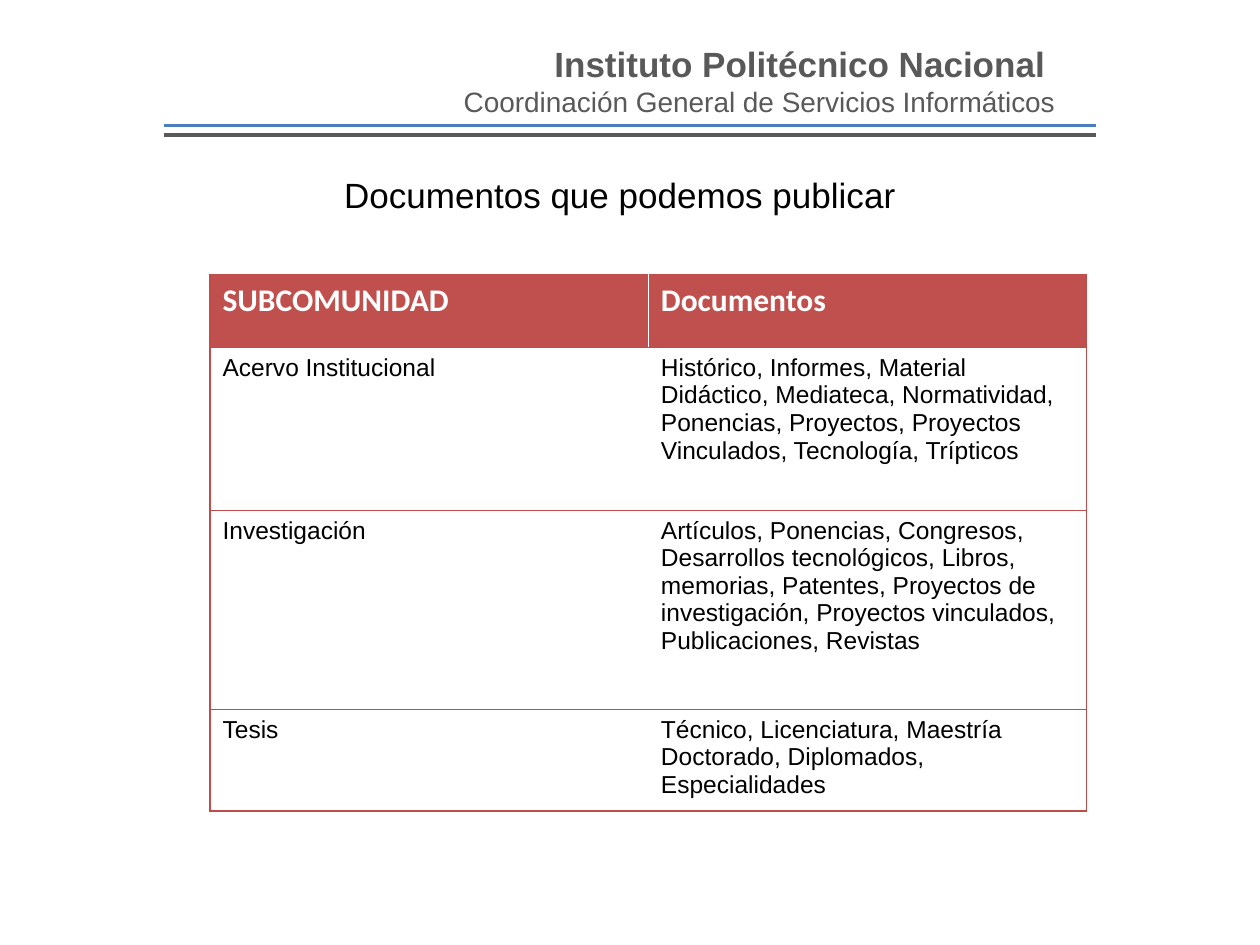
from lxml.etree import SubElement
from pptx import Presentation
from pptx.dml.color import RGBColor
from pptx.enum.shapes import MSO_CONNECTOR
from pptx.enum.text import PP_ALIGN
from pptx.oxml import parse_xml
from pptx.oxml.ns import nsdecls, qn
from pptx.util import Pt

COLORS = {"gray": "595959", "blue": "4B7EBC", "red": "C0504D",
          "border": "BF4C48", "black": "000000", "white": "FFFFFF"}


def format_text(para, size, color, bold=False, name="Arial", align=PP_ALIGN.LEFT):
    para.alignment = align
    for span in para.runs:
        span.font.name = name
        span.font.size = Pt(size)
        span.font.bold = bold
        span.font.color.rgb = RGBColor.from_string(COLORS[color])


def add_border(cell, side, position):
    """Draw a thin line on one side (L, R, T or B) of a table cell."""
    line = parse_xml(
        f'<a:ln{side} {nsdecls("a")} w="{Pt(0.75)}"><a:solidFill>'
        f'<a:srgbClr val="{COLORS["border"]}"/></a:solidFill></a:ln{side}>')
    cell._tc.get_or_add_tcPr().insert(position, line)


deck = Presentation()
deck.slide_width, deck.slide_height = Pt(720), Pt(540)
page = deck.slides.add_slide(deck.slide_layouts[6])

# Institutional heading
heading = page.shapes.add_textbox(Pt(190), Pt(21), Pt(420), Pt(51)).text_frame
heading.word_wrap = True
heading.text = "Instituto Politécnico Nacional \nCoordinación General de Servicios Informáticos"
institute, office = heading.paragraphs
format_text(institute, 20, "gray", bold=True, align=PP_ALIGN.RIGHT)
format_text(office, 16, "gray", align=PP_ALIGN.RIGHT)

# Double rule below the heading
for y, color in ((71.7, "blue"), (77.1, "gray")):
    rule = page.shapes.add_connector(
        MSO_CONNECTOR.STRAIGHT, Pt(93.6), Pt(y), Pt(626.4), Pt(y))
    rule.line.color.rgb = RGBColor.from_string(COLORS[color])
    rule.line.width = Pt(2)
    SubElement(rule._element.spPr, qn("a:effectLst"))

# Slide title
title = page.shapes.add_textbox(Pt(76.3), Pt(95.8), Pt(556), Pt(31.5)).text_frame
title.word_wrap = True
title.text = "Documentos que podemos publicar"
format_text(title.paragraphs[0], 20, "black", align=PP_ALIGN.CENTER)

# Documents by subcommunity
rows = [
    (41.8, "SUBCOMUNIDAD", "Documentos"),
    (92.9, "Acervo Institucional",
     "Histórico, Informes, Material Didáctico, Mediateca, Normatividad, "
     "Ponencias, Proyectos, Proyectos Vinculados, Tecnología, Trípticos"),
    (113.8, "Investigación",
     "Artículos, Ponencias, Congresos, Desarrollos tecnológicos, Libros, "
     "memorias, Patentes, Proyectos de investigación, Proyectos vinculados, "
     "Publicaciones, Revistas"),
    (58, "Tesis",
     "Técnico, Licenciatura, Maestría Doctorado, Diplomados, Especialidades"),
]
table = page.shapes.add_table(
    len(rows), 2, Pt(120), Pt(157), Pt(501), Pt(sum(row[0] for row in rows))).table
for column in table.columns:
    column.width = Pt(250.5)

for row_index, (height, *texts) in enumerate(rows):
    table.rows[row_index].height = Pt(height)
    for column_index, text in enumerate(texts):
        cell = table.cell(row_index, column_index)
        cell.text = text
        para = cell.text_frame.paragraphs[0]
        if row_index == 0:
            format_text(para, 18, "white", bold=True, name="Calibri")
            cell.fill.solid()
            cell.fill.fore_color.rgb = RGBColor.from_string(COLORS["red"])
        else:
            format_text(para, 14, "black")
            cell.fill.background()
        outer_side = "LR"[column_index]
        for position, side in enumerate((outer_side, "T", "B")):
            add_border(cell, side, position)

deck.save("out.pptx")
